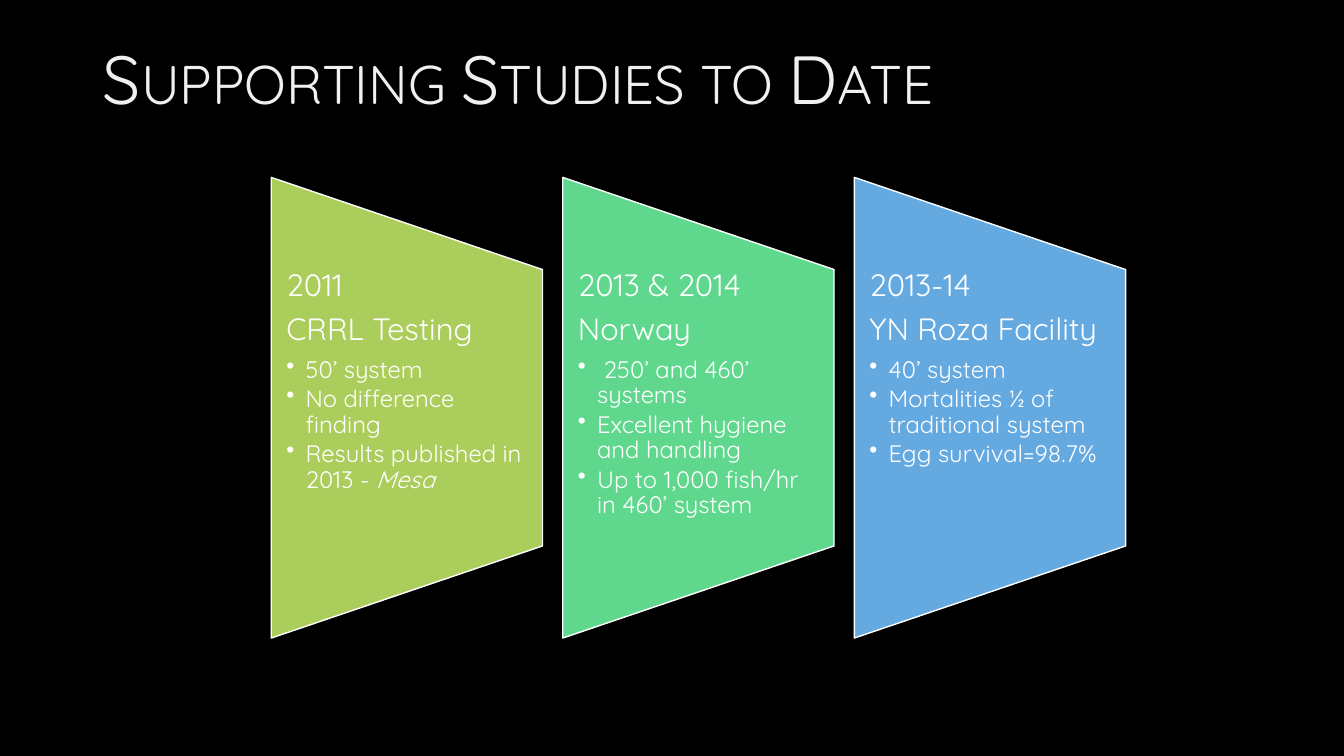
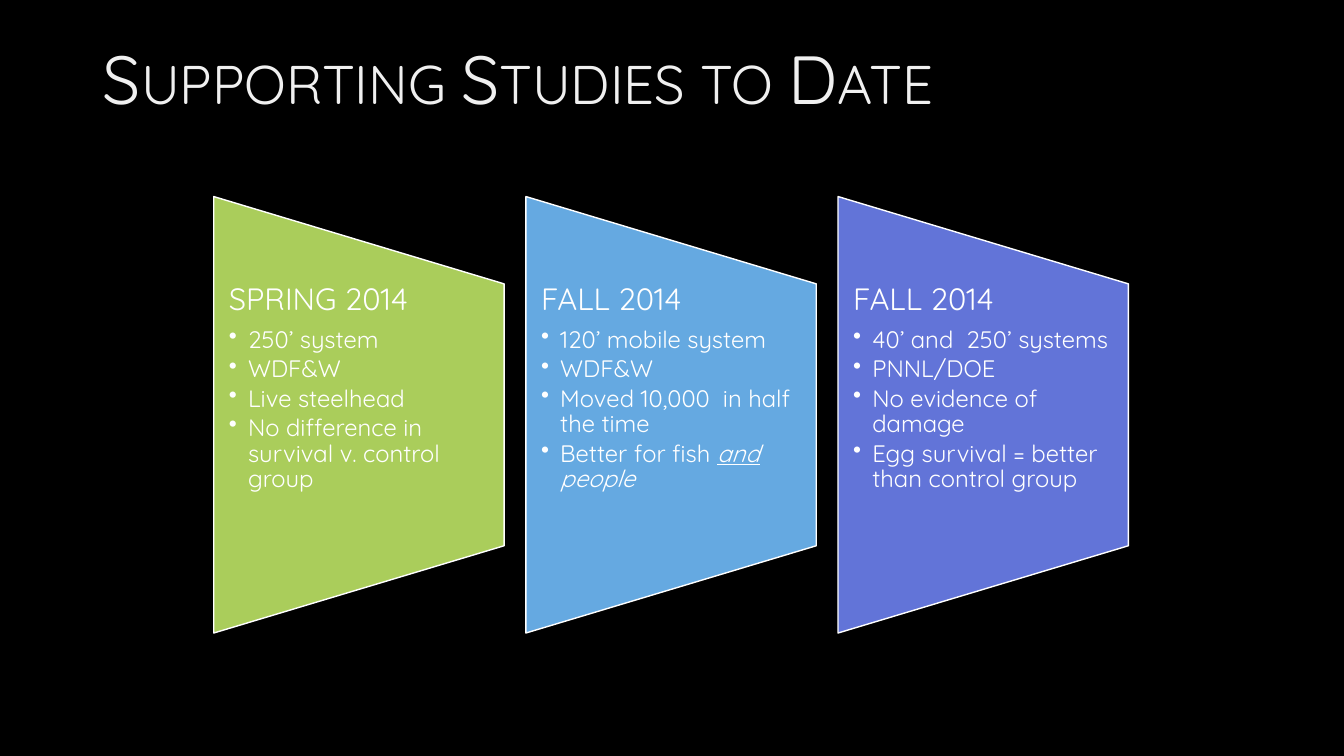
import pptx
import pptx.dml.color
import pptx.enum.shapes
import pptx.enum.text
import pptx.oxml.ns
import pptx.util
from lxml import etree

Inches = pptx.util.Inches
Pt = pptx.util.Pt

HUES = {
    "back": "000000", "title": "F0F0F0", "text": "FFFFFF",
    "lime": "AACD5B", "mint": "5FD88D", "sky": "65A9E1", "iris": "6274D8",
}
FONT = "Quicksand"
TITLE = "Supporting Studies to Date"


def color(name):
    return pptx.dml.color.RGBColor.from_string(HUES[name])


def add_text(para, text, size, hue="text", italic=None, line=None, caps=False):
    """Add one formatted run to a paragraph."""
    run = para.add_run()
    run.text = text
    font = run.font
    font.name, font.size = FONT, Pt(size)
    font.italic, font.underline = italic, line
    font.color.rgb = color(hue)
    if caps:
        font._element.set("cap", "small")


def add_bullet(para):
    props = para._p.get_or_add_pPr()
    props.set("marL", str(Inches(0.19)))
    props.set("indent", str(-Inches(0.19)))
    mark = etree.SubElement(props, pptx.oxml.ns.qn("a:buChar"))
    mark.set("char", "•")


def add_title(slide, width):
    title = slide.shapes.title
    title.left, title.top = Inches(0.92), Inches(0.4)
    title.width, title.height = Inches(width), Inches(0.84)
    frame = title.text_frame
    frame.word_wrap = True
    frame.auto_size = pptx.enum.text.MSO_AUTO_SIZE.NONE
    frame.vertical_anchor = pptx.enum.text.MSO_ANCHOR.MIDDLE
    para = frame.paragraphs[0]
    para.alignment = pptx.enum.text.PP_ALIGN.LEFT
    para.line_spacing = 0.9
    add_text(para, TITLE, 48.6, hue="title", caps=True)


def add_panel(slide, box, hue, heads, items):
    """Draw a panel tapering to the right, with headings and bullets."""
    x, y, w, h = box

    # Trapezoid, turned about the centre of the box
    panel = slide.shapes.add_shape(
        pptx.enum.shapes.MSO_SHAPE.FLOWCHART_MANUAL_OPERATION,
        Inches(x + (w - h) / 2), Inches(y + (h - w) / 2), Inches(h), Inches(w))
    panel.rotation = 270
    panel.shadow.inherit = False
    panel.fill.solid()
    panel.fill.fore_color.rgb = color(hue)
    panel.line.color.rgb = color("text")
    panel.line.width = Pt(1)

    # Text in the middle three fifths
    area = slide.shapes.add_textbox(
        Inches(x), Inches(y + h / 5), Inches(w), Inches(h * 3 / 5))
    frame = area.text_frame
    frame.word_wrap = True
    frame.margin_left = frame.margin_right = Inches(0.15)
    frame.margin_top = frame.margin_bottom = 0
    rows = [(head, 22, 0.35) for head in heads]
    rows += [(item, 17, 0.15) for item in items]
    for i, (row, size, gap) in enumerate(rows):
        para = frame.add_paragraph() if i else frame.paragraphs[0]
        if i >= len(heads):
            para.level = 1
            add_bullet(para)
        para.line_spacing = 0.9
        para.space_after = Pt(size * gap)
        for text, style in [(row, {})] if isinstance(row, str) else row:
            add_text(para, text, size, **style)


def add_studies(deck, width, box, panels):
    """Add a slide with a title and a row of panels; box is the first one."""
    slide = deck.slides.add_slide(deck.slide_layouts[5])
    add_title(slide, width)
    x, y, w, h = box
    for i, panel in enumerate(panels):
        add_panel(slide, (x + i * w * 1.075, y, w, h), *panel)


EARLY = [
    ("lime", ["2011", "CRRL Testing"], [
        "50’ system",
        "No difference finding",
        [("Results published in 2013 - ", {}), ("Mesa", {"italic": True})]]),
    ("mint", ["2013 & 2014", "Norway"], [
        " 250’ and 460’ systems",
        "Excellent hygiene and handling",
        "Up to 1,000 fish/hr in 460’ system"]),
    ("sky", ["2013-14", "YN Roza Facility"], [
        "40’ system",
        "Mortalities ½ of traditional system",
        "Egg survival=98.7%"]),
]
LATE = [
    ("lime", ["SPRING 2014"], [
        "250’ system",
        "WDF&W",
        "Live steelhead",
        "No difference in survival v. control group"]),
    ("sky", ["FALL 2014"], [
        "120’ mobile system",
        "WDF&W",
        "Moved 10,000  in half the time",
        [("Better for fish ", {}),
         ("and", {"italic": True, "line": True}),
         (" people", {"italic": True})]]),
    ("iris", ["FALL 2014"], [
        "40’ and  250’ systems",
        "PNNL/DOE",
        "No evidence of damage",
        "Egg survival = better than control group"]),
]


def main():
    deck = pptx.Presentation()
    deck.slide_width, deck.slide_height = Inches(13.33), Inches(7.5)
    back = deck.slide_master.background.fill
    back.solid()
    back.fore_color.rgb = color("back")
    add_studies(deck, 10.78, (2.69, 1.76, 2.69, 4.57), EARLY)
    add_studies(deck, 11.24, (2.12, 1.95, 2.88, 4.33), LATE)
    deck.save("out.pptx")


if __name__ == "__main__":
    main()
